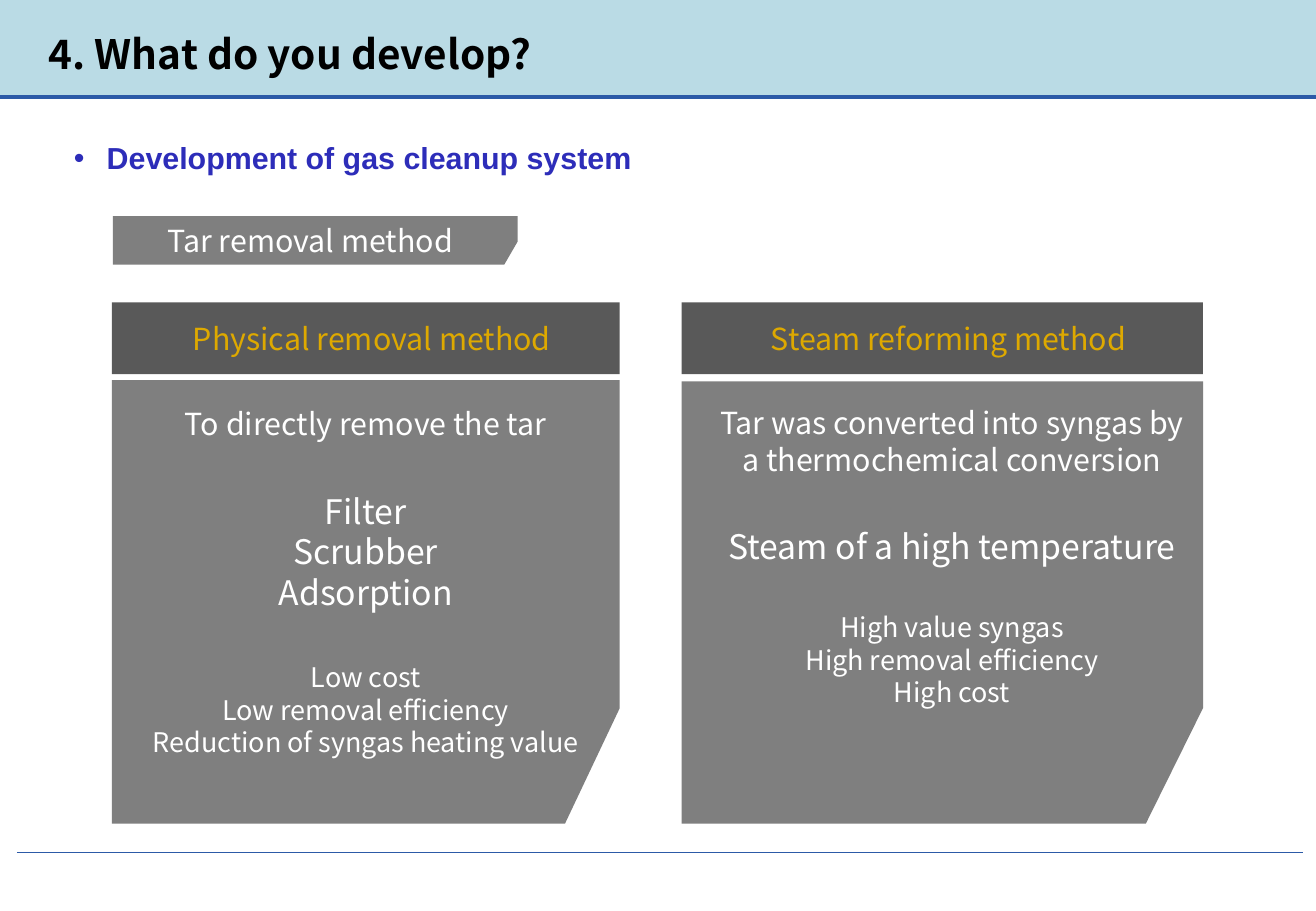
from lxml import etree
from pptx import Presentation
from pptx.dml.color import RGBColor
from pptx.enum.shapes import MSO_CONNECTOR, MSO_SHAPE
from pptx.enum.text import MSO_ANCHOR, MSO_AUTO_SIZE, PP_ALIGN
from pptx.oxml.ns import qn
from pptx.util import Inches, Pt

RECTANGLE = MSO_SHAPE.RECTANGLE
STRAIGHT = MSO_CONNECTOR.STRAIGHT
TOP, MIDDLE = MSO_ANCHOR.TOP, MSO_ANCHOR.MIDDLE
LEFT, CENTER = PP_ALIGN.LEFT, PP_ALIGN.CENTER
NO_AUTOFIT = MSO_AUTO_SIZE.NONE

SLIDE_WIDTH, SLIDE_HEIGHT = 10.83, 7.5
FONT = "Noto Sans CJK KR"
LINE_FACTOR = 1.2
BLACK, WHITE, GOLD, INDIGO = "000000", "FFFFFF", "DEA900", "2D2DB9"
BAND, RULE, DARK_GRAY, GRAY = "BADBE5", "2C5AA7", "595959", "7F7F7F"

TITLE = "4. What do you develop?"
TOPIC = "Development of gas cleanup system"
TAG = "Tar removal method"
RULES = [(0, SLIDE_WIDTH, 0.8, 2.25), (0.14, 10.72, 7.02, 0.75)]
HEADER_TOP, HEADER_HEIGHT = 2.49, 0.59
PANEL_BOTTOM, CUT_TOP = 6.78, 5.83
METHODS = [
    {
        "heading": "Physical removal method",
        "left": 0.92, "width": 4.18, "top": 3.13, "cut": 0.45,
        "text_box": (0.92, 3.29, 4.18, 3.3),
        "groups": [
            (18, 0, ["To directly remove the tar"]),
            (20, 28.8, ["Filter", "Scrubber", "Adsorption"]),
            (16, 28.8, ["Low cost", "Low removal efficiency",
                        "Reduction of syngas heating value"]),
        ],
    },
    {
        "heading": "Steam reforming method",
        "left": 5.61, "width": 4.29, "top": 3.14, "cut": 0.47,
        "text_box": (5.77, 3.28, 4.13, 3.26),
        "groups": [
            (18, 0, ["Tar was converted into syngas by a thermochemical conversion"]),
            (20, 28.8, ["Steam of a high temperature"]),
            (16, 26.4, ["High value syngas", "High removal efficiency", "High cost"]),
        ],
    },
]


def color(value):
    return RGBColor.from_string(value)


def set_frame(shape, anchor=TOP, insets=(0.1, 0.05, 0.1, 0.05)):
    frame = shape.text_frame
    left, top, right, bottom = map(Inches, insets)
    settings = {
        "word_wrap": True, "auto_size": NO_AUTOFIT, "vertical_anchor": anchor,
        "margin_left": left, "margin_top": top,
        "margin_right": right, "margin_bottom": bottom,
    }
    for name, value in settings.items():
        setattr(frame, name, value)
    return frame


def write(paragraph, text, size, fill, align=CENTER, bold=False, font=FONT,
          spacing=None, before=0):
    paragraph.text = text
    paragraph.alignment = align
    paragraph.line_spacing = spacing or Pt(size * LINE_FACTOR)
    paragraph.space_before = Pt(before)
    for name, value in {"name": font, "size": Pt(size), "bold": bold}.items():
        setattr(paragraph.font, name, value)
    paragraph.font.color.rgb = color(fill)


def paint(shape, fill):
    shape.shadow.inherit = False
    shape.fill.solid()
    shape.fill.fore_color.rgb = color(fill)
    shape.line.fill.background()
    return shape


def add_rectangle(slide, box, fill):
    return paint(slide.shapes.add_shape(RECTANGLE, *map(Inches, box)), fill)


def add_cut_panel(slide, left, top, right, bottom, cut, cut_top):
    points = [(right - cut, bottom), (right, cut_top), (right, top), (left, top)]
    builder = slide.shapes.build_freeform(Inches(left), Inches(bottom))
    builder.add_line_segments([(Inches(x), Inches(y)) for x, y in points], close=True)
    return paint(builder.convert_to_shape(), GRAY)


def add_rule(slide, start, end, y, weight):
    rule = slide.shapes.add_connector(
        STRAIGHT, Inches(start), Inches(y), Inches(end), Inches(y))
    rule.line.color.rgb = color(RULE)
    rule.line.width = Pt(weight)
    etree.SubElement(rule._element.spPr, qn("a:effectLst"))


def add_topic(slide):
    box = slide.shapes.add_textbox(*map(Inches, (0.51, 0.95, 9.71, 0.47)))
    paragraph = set_frame(box, insets=(0.1, 0.05, 0, 0.05)).paragraphs[0]
    properties = paragraph._p.get_or_add_pPr()
    properties.set("marL", str(Inches(0.27)))
    properties.set("indent", str(-Inches(0.27)))
    etree.SubElement(properties, qn("a:buFont")).set("typeface", "Arial")
    etree.SubElement(properties, qn("a:buChar")).set("char", "•")
    write(paragraph, TOPIC, 18, INDIGO, LEFT, True, "Arial", 1.5)


def add_method(slide, method):
    left, width = method["left"], method["width"]
    header = add_rectangle(slide, (left, HEADER_TOP, width, HEADER_HEIGHT), DARK_GRAY)
    frame = set_frame(header, MIDDLE, (0.2, 0.05, 0.1, 0.05))
    write(frame.paragraphs[0], method["heading"], 18, GOLD)
    add_cut_panel(slide, left, method["top"], left + width, PANEL_BOTTOM,
                  method["cut"], CUT_TOP)
    frame = set_frame(slide.shapes.add_textbox(*map(Inches, method["text_box"])))
    paragraph = frame.paragraphs[0]
    for size, gap, lines in method["groups"]:
        for index, line in enumerate(lines):
            if paragraph.text:
                paragraph = frame.add_paragraph()
            write(paragraph, line, size, WHITE, before=0 if index else gap)


def main():
    presentation = Presentation()
    presentation.slide_width = Inches(SLIDE_WIDTH)
    presentation.slide_height = Inches(SLIDE_HEIGHT)
    slide = presentation.slides.add_slide(presentation.slide_layouts[5])

    band = add_rectangle(slide, (0, 0, SLIDE_WIDTH, 0.79), BAND)
    title = slide.shapes.title
    title._element.addprevious(band._element)
    title.left, title.top, title.width, title.height = map(Inches, (0.3, 0.19, 7.83, 0.5))
    write(set_frame(title).paragraphs[0], TITLE, 24, BLACK, LEFT, True)

    for rule in RULES:
        add_rule(slide, *rule)
    add_topic(slide)
    tag = add_cut_panel(slide, 0.93, 1.78, 4.26, 2.18, 0.11, 1.99)
    frame = set_frame(tag, MIDDLE, (0.1, 0, 0.18, 0))
    write(frame.paragraphs[0], TAG, 18, WHITE)
    for method in METHODS:
        add_method(slide, method)
    presentation.save("out.pptx")


if __name__ == "__main__":
    main()
